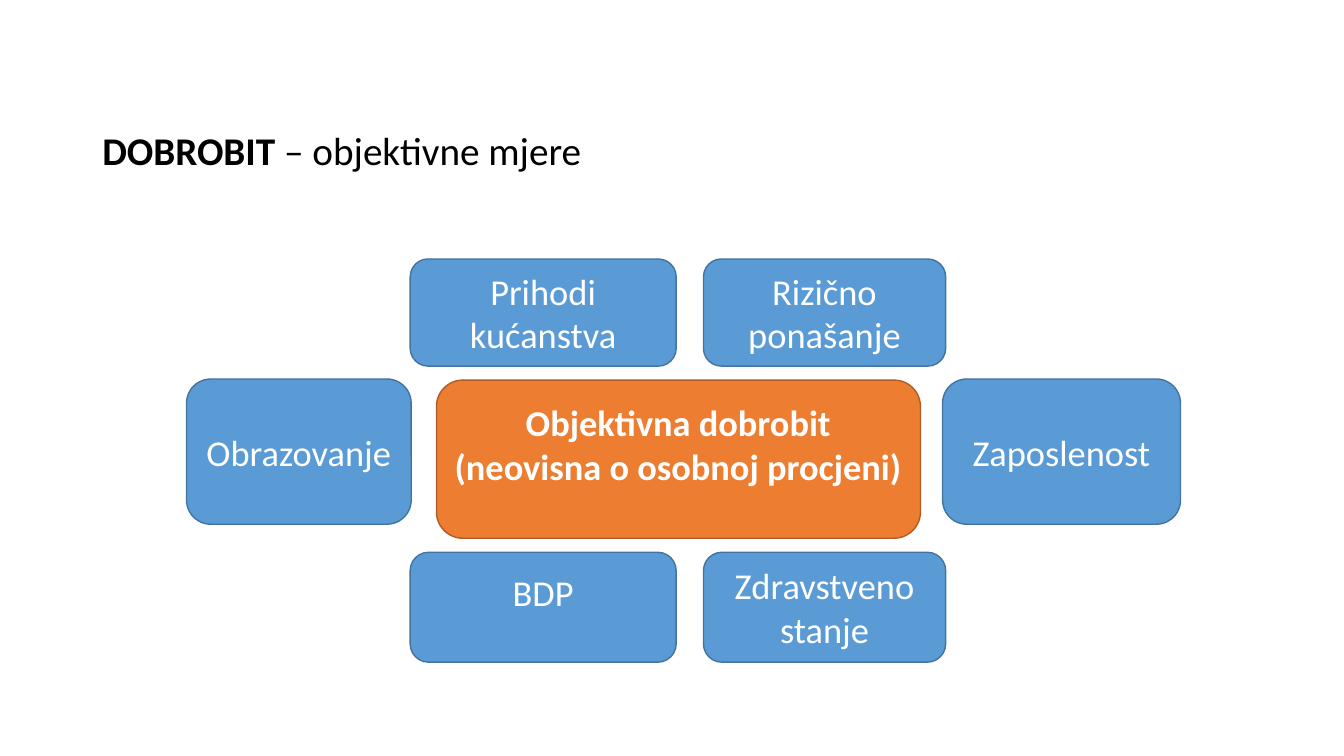
from pptx import Presentation
from pptx.dml.color import RGBColor
from pptx.enum.shapes import MSO_SHAPE
from pptx.enum.text import MSO_ANCHOR, PP_ALIGN
from pptx.util import Pt

ROUNDED = MSO_SHAPE.ROUNDED_RECTANGLE
CENTER, LEFT = PP_ALIGN.CENTER, PP_ALIGN.LEFT
MIDDLE, TOP = MSO_ANCHOR.MIDDLE, MSO_ANCHOR.TOP

# Content
TITLE = [("DOBROBIT", True), (" – objektivne mjere", False)]
CORE = ["Objektivna dobrobit", "(neovisna o osobnoj procjeni)"]
# label, column, row, whether the text is raised
MEASURES = [
    ("Zaposlenost", "right", "middle", False),
    ("BDP", "inner left", "bottom", True),
    ("Zdravstveno stanje", "inner right", "bottom", False),
    ("Obrazovanje", "left", "middle", False),
    ("Prihodi kućanstva", "inner left", "top", False),
    ("Rizično ponašanje", "inner right", "top", False),
]

# Layout in points: columns as (left, width), rows as (top, height)
SLIDE = (960, 540)
BODY = (66, 90.5, 828, 396)
CORE_BOX = (311.75, 271.5, 345.75, 113)
COLUMNS = {"left": (133.25, 160.5), "inner left": (293, 190),
           "inner right": (502.5, 173), "right": (673.25, 170)}
ROWS = {"top": (185, 76.5), "middle": (270.75, 103.75), "bottom": (394.5, 78.5)}
RAISED_INSET = 25.6

THEME = {
    "font": "Calibri", "title_size": 28, "box_size": 26, "line_width": 1,
    "title": "000000", "box_text": "FFFFFF",
    "measure": ("5B9BD5", "43739E"), "core": ("ED7D31", "AF5C24"),
}


def rgb(name):
    return RGBColor.from_string(name)


def add_run(p, text, size, color, bold):
    r = p.add_run()
    r.text = text
    style = {"name": THEME["font"], "size": Pt(size), "bold": bold}
    for key, value in style.items():
        setattr(r.font, key, value)
    r.font.color.rgb = rgb(color)


def add_box(s, box, lines, colors, bold=False, raised=False):
    sp = s.shapes.add_shape(ROUNDED, *map(Pt, box))
    sp.shadow.inherit = False
    fill, line = colors
    sp.fill.solid()
    sp.fill.fore_color.rgb = rgb(fill)
    sp.line.color.rgb = rgb(line)
    sp.line.width = Pt(THEME["line_width"])
    tf = sp.text_frame
    tf.word_wrap = True
    tf.vertical_anchor = MIDDLE
    if raised:
        tf.margin_bottom = Pt(RAISED_INSET)
    for i, text in enumerate(lines):
        p = tf.add_paragraph() if i else tf.paragraphs[0]
        p.alignment = CENTER
        add_run(p, text, THEME["box_size"], THEME["box_text"], bold)


def main():
    prs = Presentation()
    prs.slide_width, prs.slide_height = map(Pt, SLIDE)
    s = prs.slides.add_slide(prs.slide_layouts[6])

    # Title line
    tf = s.shapes.add_textbox(*map(Pt, BODY)).text_frame
    tf.word_wrap = True
    tf.vertical_anchor = TOP
    p = tf.paragraphs[0]
    title_format = {"alignment": LEFT, "line_spacing": 0.9, "space_before": Pt(10)}
    for key, value in title_format.items():
        setattr(p, key, value)
    for text, bold in TITLE:
        add_run(p, text, THEME["title_size"], THEME["title"], bold)

    # Core concept
    add_box(s, CORE_BOX, CORE, THEME["core"], bold=True, raised=True)

    # Surrounding measures
    for label, column, row, raised in MEASURES:
        left, width = COLUMNS[column]
        top, height = ROWS[row]
        add_box(s, (left, top, width, height), [label], THEME["measure"], raised=raised)

    prs.save("out.pptx")


if __name__ == "__main__":
    main()
